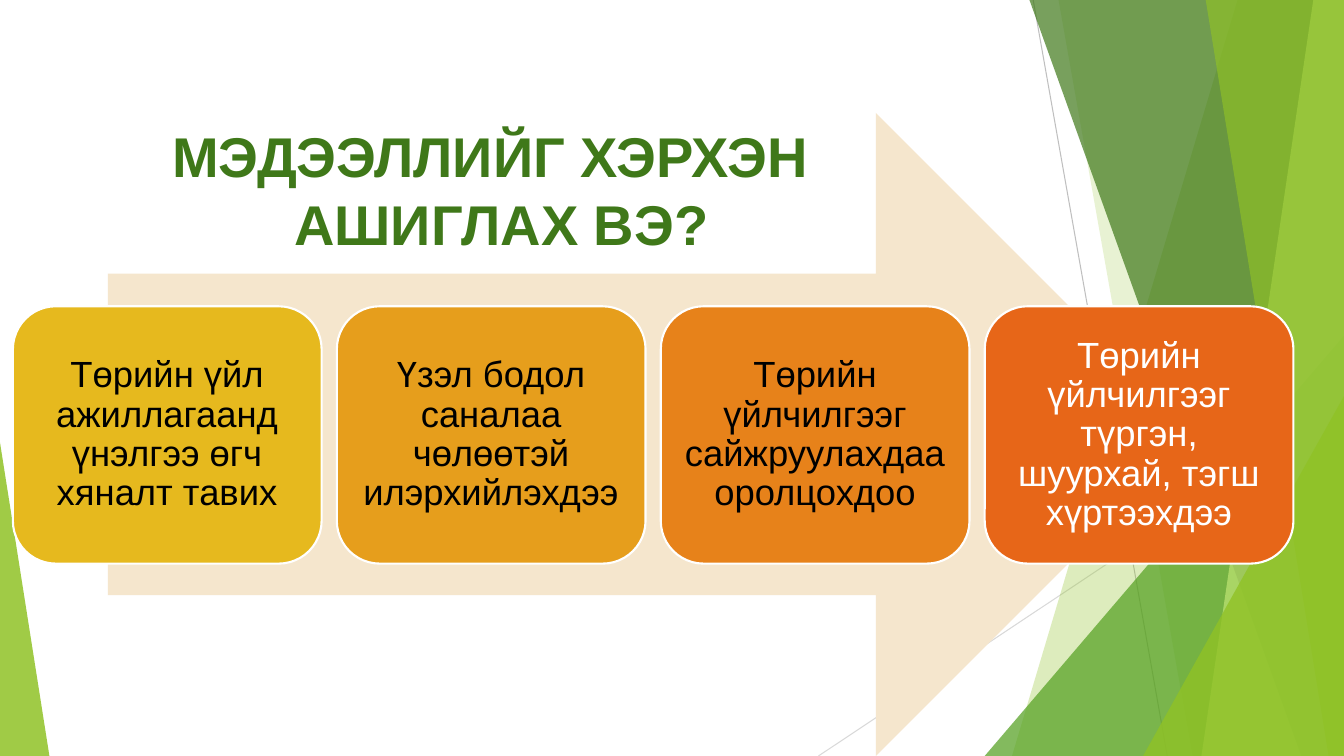
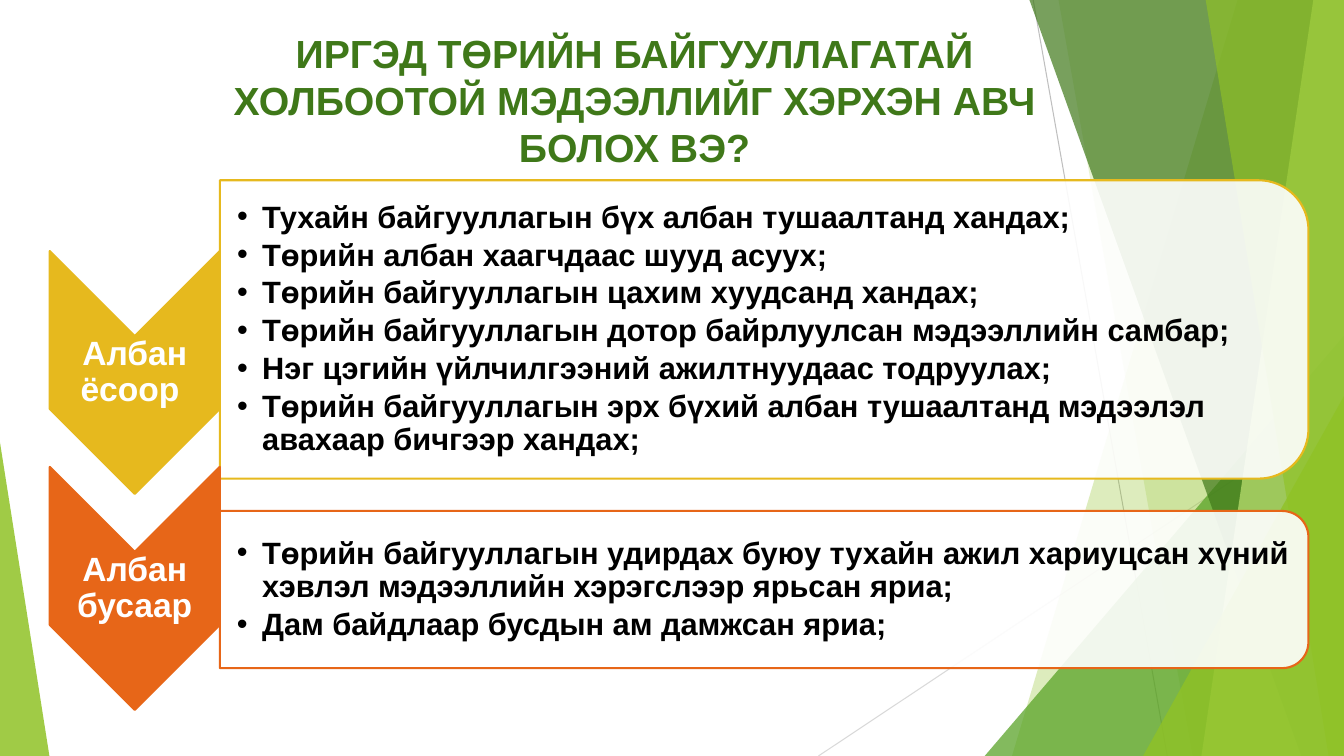
from pptx import Presentation
from pptx.dml.color import RGBColor
from pptx.enum.shapes import MSO_CONNECTOR, MSO_SHAPE
from pptx.enum.text import MSO_ANCHOR, PP_ALIGN
from pptx.oxml.ns import qn
from pptx.oxml.xmlchemy import OxmlElement
from pptx.util import Pt

LEFT, CENTER = PP_ALIGN.LEFT, PP_ALIGN.CENTER
TOP, MIDDLE = MSO_ANCHOR.TOP, MSO_ANCHOR.MIDDLE
STRAIGHT = MSO_CONNECTOR.STRAIGHT
TRIANGLE, RIGHT_ARROW = MSO_SHAPE.ISOSCELES_TRIANGLE, MSO_SHAPE.RIGHT_ARROW
ROUNDED, PANEL, CHEVRON = (
    MSO_SHAPE.ROUNDED_RECTANGLE, MSO_SHAPE.ROUND_2_SAME_RECTANGLE, MSO_SHAPE.CHEVRON)

WIDTH, HEIGHT = 960, 540
FONT = "Arial"
LIME, GREEN, DARK_GREEN, PALE_LIME = "90C226", "54A021", "3F7819", "C0E474"
YELLOW, ORANGE, SAND = "E6B91E", "E76618", "F5E6CD"
WHITE, BLACK = "FFFFFF", "000000"
TITLE_INSETS = (7.2, 3.6, 7.2, 3.6)

RAYS = [((738, 0), (833.8, HEIGHT), "BFBFBF"), ((WIDTH, 290.2), (584.6, HEIGHT), "D9D9D9")]
DECORATION = [
    ("band", (884.2, 722.9), LIME, 30),
    ("band", (756, 851.8), LIME, 20),
    ("triangle", (703.4, 239.8, 256.6, 1), GREEN, 72),
    ("band", (735.1, 929.5), DARK_GREEN, 70),
    ("band", (938.2, 858.2), PALE_LIME, 70),
    ("band", (861.1, 949), LIME, 65),
    ("triangle", (816.5, 283, 143.5, 1), LIME, 80),
    ("triangle", (0, 316.1, 35.3, 0), LIME, 85),
]

USES_TITLE = [("МЭДЭЭЛЛИЙГ ХЭРХЭН", LEFT), ("АШИГЛАХ ВЭ?", CENTER)]
USES = [
    ("Төрийн үйл ажиллагаанд үнэлгээ өгч хяналт тавих", YELLOW, BLACK),
    ("Үзэл бодол саналаа чөлөөтэй илэрхийлэхдээ", "E69E1C", BLACK),
    ("Төрийн үйлчилгээг сайжруулахдаа оролцохдоо", "E7821A", BLACK),
    ("Төрийн үйлчилгээг түргэн, шуурхай, тэгш хүртээхдээ", ORANGE, WHITE),
]
CARD_LEFT, CARD_TOP, CARD_WIDTH, CARD_HEIGHT, CARD_PITCH = 9.2, 218.8, 220.5, 183.8, 231.4

CHANNELS_TITLE = [
    ("ИРГЭД ТӨРИЙН БАЙГУУЛЛАГАТАЙ ХОЛБООТОЙ МЭДЭЭЛЛИЙГ ХЭРХЭН АВЧ БОЛОХ ВЭ?", CENTER)]
CHANNELS = [
    {"label": "Албан ёсоор ", "color": YELLOW, "chevron_top": 179.3,
     "panel_top": 128.8, "panel_height": 213.1,
     "items": [
         "Тухайн байгууллагын бүх албан тушаалтанд хандах;",
         "Төрийн албан хаагчдаас шууд асуух;",
         "Төрийн байгууллагын цахим хуудсанд хандах;",
         "Төрийн байгууллагын дотор байрлуулсан мэдээллийн самбар;",
         "Нэг цэгийн үйлчилгээний ажилтнуудаас тодруулах;",
         "Төрийн байгууллагын эрх бүхий албан тушаалтанд мэдээлэл авахаар бичгээр хандах;",
     ]},
    {"label": "Албан бусаар", "color": ORANGE, "chevron_top": 333.5,
     "panel_top": 365, "panel_height": 112.3,
     "items": [
         "Төрийн байгууллагын удирдах буюу тухайн ажил хариуцсан хүний "
         "хэвлэл мэдээллийн хэрэгслээр ярьсан яриа;",
         "Дам байдлаар бусдын ам дамжсан яриа;",
     ]},
]
CHEVRON_LEFT, CHEVRON_WIDTH, CHEVRON_HEIGHT = 35.5, 121.5, 173.5
PANEL_LEFT, PANEL_WIDTH = 157, 777.6
CORNER_INSET = 0.048


def rgb(color):
    return RGBColor.from_string(color)


def paint(shape, fill, opacity=100, line=None):
    shape.shadow.inherit = False
    shape.fill.solid()
    shape.fill.fore_color.rgb = rgb(fill)
    if opacity < 100:
        alpha = OxmlElement("a:alpha")
        alpha.set("val", str(opacity * 1000))
        shape.element.spPr.find(qn("a:solidFill")).find(qn("a:srgbClr")).append(alpha)
    if line:
        shape.line.color.rgb = rgb(line)
        shape.line.width = Pt(1.5)
    else:
        shape.line.fill.background()


def add_shape(slide, kind, box, fill, opacity=100, line=None):
    shape = slide.shapes.add_shape(kind, *map(Pt, box))
    paint(shape, fill, opacity, line)
    return shape


def add_turned_shape(slide, kind, box, fill, opacity=100, line=None):
    left, top, width, height = box
    shift = (width - height) / 2
    shape = add_shape(slide, kind, (left + shift, top - shift, height, width),
                      fill, opacity, line)
    shape.rotation = 90


def add_bullet(paragraph):
    properties = paragraph._p.get_or_add_pPr()
    properties.set("marL", str(Pt(18)))
    properties.set("indent", str(-Pt(18)))
    font = OxmlElement("a:buFont")
    font.set("typeface", FONT)
    mark = OxmlElement("a:buChar")
    mark.set("char", "•")
    properties.extend([font, mark])


def write(shape, lines, size, color, bold=False, anchor=MIDDLE,
          insets=(1.4, 1.4, 1.4, 1.4), spacing=0.9, after=0, bullets=False):
    frame = shape.text_frame
    frame.word_wrap = True
    frame.vertical_anchor = anchor
    frame.margin_left, frame.margin_top, frame.margin_right, frame.margin_bottom = map(Pt, insets)
    frame.text = "\n".join(text for text, _ in lines)
    for paragraph, (_, alignment) in zip(frame.paragraphs, lines):
        paragraph.alignment = alignment
        paragraph.line_spacing = spacing
        paragraph.space_after = Pt(after)
        if bullets:
            add_bullet(paragraph)
        for run in paragraph.runs:
            run.font.name = FONT
            run.font.size = Pt(size)
            run.font.bold = bold
            run.font.color.rgb = rgb(color)


def add_text(slide, box, lines, size, color, **style):
    write(slide.shapes.add_textbox(*map(Pt, box)), lines, size, color, **style)


def add_title(slide, box, lines, size):
    add_text(slide, box, lines, size, DARK_GREEN, bold=True, anchor=TOP,
             insets=TITLE_INSETS, spacing=1.0)


def add_decoration(slide):
    for start, end, color in RAYS:
        ray = slide.shapes.add_connector(STRAIGHT, *map(Pt, start + end))
        ray.line.color.rgb = rgb(color)
        ray.line.width = Pt(0.75)
        ray._element.spPr.append(OxmlElement("a:effectLst"))
    for kind, place, color, opacity in DECORATION:
        if kind == "band":
            top_left, bottom_left = place
            builder = slide.shapes.build_freeform(Pt(top_left), Pt(-0.7))
            corners = [(WIDTH, -0.7), (WIDTH, HEIGHT), (bottom_left, HEIGHT)]
            builder.add_line_segments([(Pt(x), Pt(y)) for x, y in corners])
            paint(builder.convert_to_shape(), color, opacity)
        else:
            left, top, width, apex = place
            triangle = add_shape(slide, TRIANGLE, (left, top, width, HEIGHT - top), color, opacity)
            triangle.adjustments[0] = apex


def add_slide(presentation):
    slide = presentation.slides.add_slide(presentation.slide_layouts[6])
    add_decoration(slide)
    return slide


def build_uses(presentation):
    slide = add_slide(presentation)
    add_title(slide, (115.9, 83.5, 484.6, 104.4), USES_TITLE, 40)
    add_shape(slide, RIGHT_ARROW, (77, 80.6, 778.3, 459.4), SAND)
    for index, (text, fill, color) in enumerate(USES):
        box = (CARD_LEFT + index * CARD_PITCH, CARD_TOP, CARD_WIDTH, CARD_HEIGHT)
        card = add_shape(slide, ROUNDED, box, fill, line=WHITE)
        write(card, [(text, CENTER)], 26, color, insets=(7.8, 7.8, 7.8, 7.8))


def build_channels(presentation):
    slide = add_slide(presentation)
    add_title(slide, (159.8, 17.3, 586.8, 108.7), CHANNELS_TITLE, 28)
    for channel in CHANNELS:
        color, top = channel["color"], channel["chevron_top"]
        add_turned_shape(slide, CHEVRON, (CHEVRON_LEFT, top, CHEVRON_WIDTH, CHEVRON_HEIGHT),
                         color, line=color)
        label_box = (CHEVRON_LEFT, top + CHEVRON_WIDTH / 2,
                     CHEVRON_WIDTH, CHEVRON_HEIGHT - CHEVRON_WIDTH)
        add_text(slide, label_box, [(channel["label"], CENTER)], 24, WHITE, bold=True)

        top, height = channel["panel_top"], channel["panel_height"]
        add_turned_shape(slide, PANEL, (PANEL_LEFT, top, PANEL_WIDTH, height),
                         WHITE, 90, color)
        inset = height * CORNER_INSET
        items_box = (PANEL_LEFT, top + inset, PANEL_WIDTH - inset, height - 2 * inset)
        add_text(slide, items_box, [(item, LEFT) for item in channel["items"]], 22, BLACK,
                 bold=True, insets=(12.3, 1.4, 1.4, 1.4), after=3.3, bullets=True)


def main():
    presentation = Presentation()
    presentation.slide_width, presentation.slide_height = Pt(WIDTH), Pt(HEIGHT)
    build_uses(presentation)
    build_channels(presentation)
    presentation.save("out.pptx")


if __name__ == "__main__":
    main()
